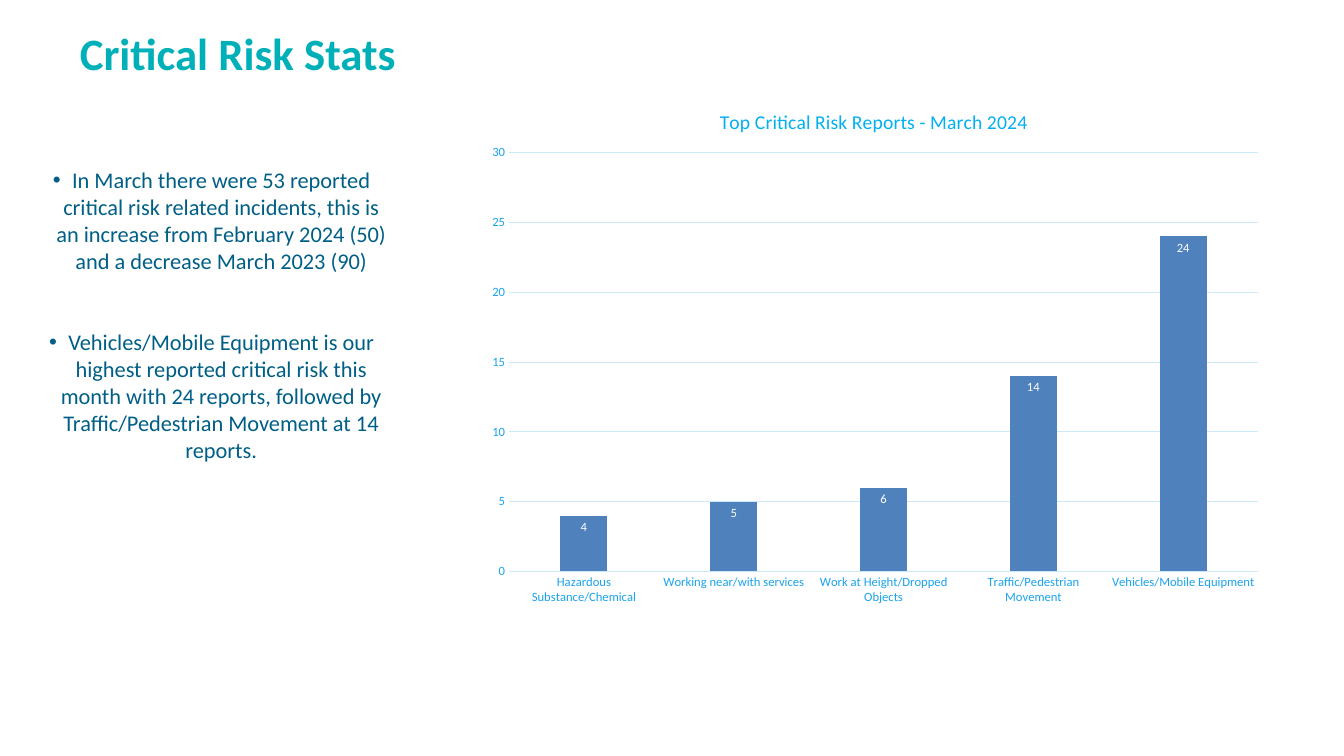
from dataclasses import dataclass
from lxml import etree
from pptx import Presentation
from pptx import util as u
from pptx.chart.data import CategoryChartData
from pptx.dml.color import RGBColor
from pptx.enum import chart as ch, text
from pptx.oxml import ns


@dataclass(frozen=True)
class Theme:
    font: str = "Calibri"
    heading: str = "00B0B9"
    body: str = "005F86"
    chart_text: str = "0A5075"
    chart_title: str = "00B0F0"
    axis: str = "1AA3EB"
    grid: str = "CAEAFA"
    bar: str = "4F81BD"
    label: str = "FFFFFF"
    heading_size: int = 32
    body_size: int = 16
    chart_title_size: int = 14
    chart_size: int = 10
    axis_size: int = 9


THEME = Theme()
WIDTH, HEIGHT = u.Inches(13.33), u.Inches(7.5)

BULLETS = [
    "In March there were 53 reported critical risk related incidents, "
    "this is an increase from February 2024 (50) and a decrease March 2023 (90)",
    "Vehicles/Mobile Equipment is our highest reported critical risk this month "
    "with 24 reports, followed by Traffic/Pedestrian Movement at 14 reports.",
]
RISKS = {
    "Hazardous Substance/Chemical": 4,
    "Working near/with services": 5,
    "Work at Height/Dropped Objects": 6,
    "Traffic/Pedestrian Movement": 14,
    "Vehicles/Mobile Equipment": 24,
}


def box(left, top, width, height):
    """Turn percentages of the slide into lengths."""
    return (int(WIDTH * left / 100), int(HEIGHT * top / 100),
            int(WIDTH * width / 100), int(HEIGHT * height / 100))


def style(font, size, color, bold=False):
    font.name, font.size, font.bold = THEME.font, u.Pt(size), bold
    font.color.rgb = RGBColor.from_string(color)


def add_text_frame(slide, area):
    tf = slide.shapes.add_textbox(*area).text_frame
    tf.word_wrap = True
    return tf


def add_heading(slide, area, words):
    p = add_text_frame(slide, area).paragraphs[0]
    p.line_spacing = u.Pt(THEME.heading_size)
    r = p.add_run()
    r.text = words
    style(r.font, THEME.heading_size, THEME.heading, bold=True)


def add_bullets(slide, area, items):
    tf = add_text_frame(slide, area)
    indent = u.Inches(0.19)
    for i, item in enumerate(items):
        p = tf.add_paragraph() if i else tf.paragraphs[0]
        p.alignment = text.PP_ALIGN.CENTER
        if i:
            p.space_before = u.Pt(39)
        pPr = p._p.get_or_add_pPr()
        pPr.set("marL", str(indent))
        pPr.set("indent", str(-indent))
        etree.SubElement(pPr, ns.qn("a:buFont"), typeface="Arial")
        etree.SubElement(pPr, ns.qn("a:buChar"), char="•")
        r = p.add_run()
        r.text = item
        style(r.font, THEME.body_size, THEME.body)


def set_layout(parent, index, **shares):
    """Place a chart part by shares of the chart area."""
    for old in parent.findall(ns.qn("c:layout")):
        parent.remove(old)
    layout = etree.Element(ns.qn("c:layout"))
    manual = etree.SubElement(layout, ns.qn("c:manualLayout"))
    if "w" in shares:
        etree.SubElement(manual, ns.qn("c:layoutTarget"), val="inner")
    for mode in ("xMode", "yMode"):
        etree.SubElement(manual, ns.qn(f"c:{mode}"), val="edge")
    for key, share in shares.items():
        etree.SubElement(manual, ns.qn(f"c:{key}"), val=str(share))
    parent.insert(index, layout)


def set_line(line):
    line.color.rgb = RGBColor.from_string(THEME.grid)
    line.width = u.Pt(0.75)


def add_risk_chart(slide, area, title, risks):
    data = CategoryChartData()
    data.categories = list(risks)
    data.add_series("Series 1", list(risks.values()))
    chart = slide.shapes.add_chart(
        ch.XL_CHART_TYPE.COLUMN_CLUSTERED, *area, data).chart
    style(chart.font, THEME.chart_size, THEME.chart_text)
    chart.has_legend = False

    # Title
    chart.has_title = True
    r = chart.chart_title.text_frame.paragraphs[0].add_run()
    r.text = title
    style(r.font, THEME.chart_title_size, THEME.chart_title)
    chart.chart_title.include_in_layout = False
    set_layout(chart.chart_title._element, 1, x=0.3, y=0.04)

    # Axes
    for axis in (chart.category_axis, chart.value_axis):
        axis.major_tick_mark = axis.minor_tick_mark = ch.XL_TICK_MARK.NONE
        style(axis.tick_labels.font, THEME.axis_size, THEME.axis)
    set_line(chart.category_axis.format.line)
    values = chart.value_axis
    values.minimum_scale, values.maximum_scale, values.major_unit = 0, 30, 5
    values.format.line.fill.background()
    set_line(values.major_gridlines.format.line)

    # Columns and their labels
    plot = chart.plots[0]
    plot.gap_width, plot.overlap, plot.vary_by_categories = 219, -27, False
    series = plot.series[0]
    series.format.fill.solid()
    series.format.fill.fore_color.rgb = RGBColor.from_string(THEME.bar)
    labels = series.data_labels
    labels.show_value = True
    labels.position = ch.XL_LABEL_POSITION.INSIDE_END
    style(labels.font, THEME.axis_size, THEME.label)
    plot_area = chart._chartSpace.find(".//" + ns.qn("c:plotArea"))
    set_layout(plot_area, 0, x=0.04, y=0.13, w=0.94, h=0.79)


def add_stats_slide(prs):
    slide = prs.slides.add_slide(prs.slide_layouts[6])
    add_heading(slide, box(5.2, 4, 89.6, 12.4), "Critical Risk Stats")
    add_bullets(slide, box(1.65, 21.33, 28.2, 40.8), BULLETS)
    add_risk_chart(slide, box(35.5, 11.1, 59.3, 70.1),
                   "Top Critical Risk Reports - March 2024", RISKS)


def main():
    prs = Presentation()
    prs.slide_width, prs.slide_height = WIDTH, HEIGHT
    add_stats_slide(prs)
    prs.save("out.pptx")


if __name__ == "__main__":
    main()
